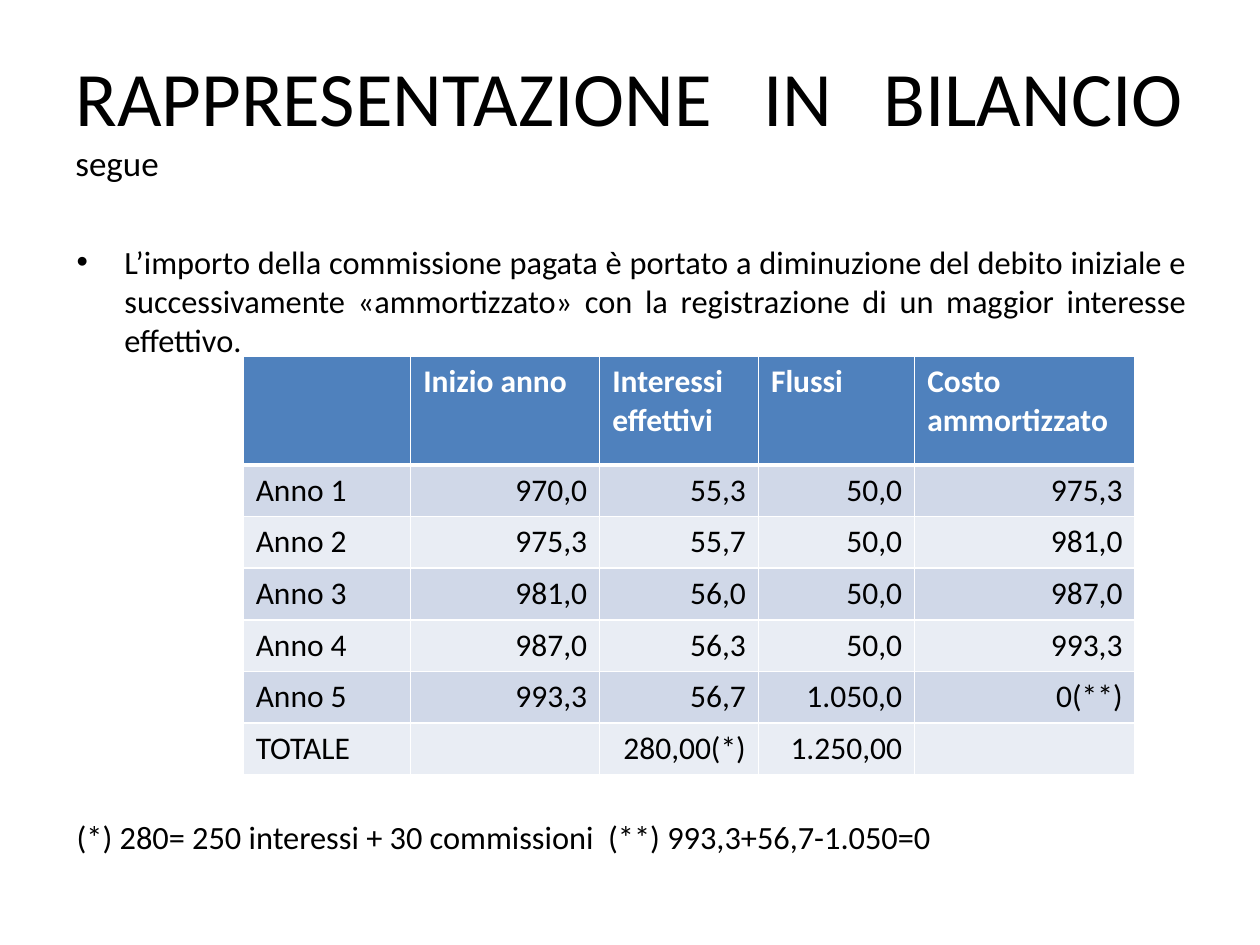
"""Build a slide on the balance-sheet presentation of amortised cost."""
from typing import NamedTuple

from lxml import etree
from pptx import Presentation
from pptx import util as u
from pptx.dml.color import RGBColor
from pptx.enum import text
from pptx.oxml import ns

BLACK = RGBColor(0x00, 0x00, 0x00)
WHITE = RGBColor(0xFF, 0xFF, 0xFF)
HEADER_BLUE = RGBColor(0x4F, 0x81, 0xBD)
BANDS = (RGBColor(0xD0, 0xD8, 0xE8), RGBColor(0xE9, 0xED, 0xF4))
FONT = "Calibri"
HEADER_HEIGHT, ROW_HEIGHT = 0.86, 0.41


class Column(NamedTuple):
    heading: str
    width: float


class Box(NamedTuple):
    left: float
    top: float
    width: float
    height: float

    def lengths(self) -> list[u.Length]:
        return [u.Inches(side) for side in self]


class Style(NamedTuple):
    size: float
    color: RGBColor = BLACK
    bold: bool = False


COLUMNS = (
    Column("", 1.33),
    Column("Inizio anno", 1.5),
    Column("Interessi effettivi", 1.26),
    Column("Flussi", 1.24),
    Column("Costo ammortizzato", 1.75),
)
YEARS = (
    ("Anno 1", "970,0", "55,3", "50,0", "975,3"),
    ("Anno 2", "975,3", "55,7", "50,0", "981,0"),
    ("Anno 3", "981,0", "56,0", "50,0", "987,0"),
    ("Anno 4", "987,0", "56,3", "50,0", "993,3"),
    ("Anno 5", "993,3", "56,7", "1.050,0", "0(**)"),
    ("TOTALE", "", "280,00(*)", "1.250,00", ""),
)


def add_run(paragraph, words: str, style: Style) -> None:
    run = paragraph.add_run()
    run.text = words
    run.font.name = FONT
    run.font.size = u.Pt(style.size)
    run.font.bold = style.bold
    run.font.color.rgb = style.color


def add_text_frame(slide, box: Box, anchor: text.MSO_ANCHOR):
    frame = slide.shapes.add_textbox(*box.lengths()).text_frame
    frame.word_wrap = True
    frame.vertical_anchor = anchor
    frame.paragraphs[0].alignment = text.PP_ALIGN.JUSTIFY
    return frame


def add_bullet(paragraph, indent: float) -> None:
    properties = paragraph._p.get_or_add_pPr()
    properties.set("marL", str(u.Inches(indent)))
    properties.set("indent", str(u.Inches(-indent)))
    etree.SubElement(properties, ns.qn("a:buFont"), typeface="Arial")
    etree.SubElement(properties, ns.qn("a:buChar"), char="•")


def add_border(cell, side: str, points: float) -> None:
    properties = cell._tc.get_or_add_tcPr()
    line = etree.SubElement(properties, ns.qn(f"a:ln{side}"), w=str(u.Pt(points)))
    fill = etree.SubElement(line, ns.qn("a:solidFill"))
    etree.SubElement(fill, ns.qn("a:srgbClr"), val=str(WHITE))


def fill_cell(cell, words: str, style: Style, color: RGBColor, *,
              right: bool = False, top: float = 1, bottom: float = 1) -> None:
    for side, points in zip("LRTB", (1, 1, top, bottom)):
        add_border(cell, side, points)
    cell.fill.solid()
    cell.fill.fore_color.rgb = color
    paragraph = cell.text_frame.paragraphs[0]
    paragraph.alignment = text.PP_ALIGN.RIGHT if right else text.PP_ALIGN.LEFT
    paragraph.font.size = u.Pt(style.size)
    if words:
        add_run(paragraph, words, style)


def add_title(slide) -> None:
    frame = add_text_frame(slide, Box(0.5, 0.3, 9, 1.25), text.MSO_ANCHOR.MIDDLE)
    title = frame.paragraphs[0]
    add_run(title, "RAPPRESENTAZIONE IN BILANCIO", Style(44))
    title.add_line_break()
    add_run(title, "segue", Style(20))


def add_body(slide) -> None:
    frame = add_text_frame(slide, Box(0.51, 1.87, 9, 4.95), text.MSO_ANCHOR.TOP)
    treatment = frame.paragraphs[0]
    add_bullet(treatment, 0.38)
    add_run(treatment, "L’importo della commissione pagata è portato a diminuzione del debito "
            "iniziale e successivamente «ammortizzato» con la registrazione di un maggior "
            "interesse effettivo.", Style(18.5))
    footnote = frame.add_paragraph()
    footnote.alignment = text.PP_ALIGN.JUSTIFY
    footnote.space_before = u.Pt(262)
    add_run(footnote, "(*) 280= 250 interessi + 30 commissioni  (**) 993,3+56,7-1.050=0",
            Style(18.5))


def add_amortisation(slide) -> None:
    box = Box(1.93, 2.83, sum(column.width for column in COLUMNS),
              HEADER_HEIGHT + ROW_HEIGHT * len(YEARS))
    table = slide.shapes.add_table(len(YEARS) + 1, len(COLUMNS), *box.lengths()).table
    table.rows[0].height = u.Inches(HEADER_HEIGHT)
    for index, column in enumerate(COLUMNS):
        table.columns[index].width = u.Inches(column.width)
        fill_cell(table.cell(0, index), column.heading, Style(18, WHITE, True),
                  HEADER_BLUE, bottom=3)
    for row, year in enumerate(YEARS, start=1):
        table.rows[row].height = u.Inches(ROW_HEIGHT)
        for index, amount in enumerate(year):
            fill_cell(table.cell(row, index), amount, Style(18), BANDS[(row - 1) % 2],
                      right=index > 0, top=3 if row == 1 else 1)


def main() -> None:
    presentation = Presentation()
    presentation.slide_width = u.Inches(10)
    presentation.slide_height = u.Inches(7.5)
    slide = presentation.slides.add_slide(presentation.slide_layouts[6])
    add_title(slide)
    add_body(slide)
    add_amortisation(slide)
    presentation.save("out.pptx")


if __name__ == "__main__":
    main()
